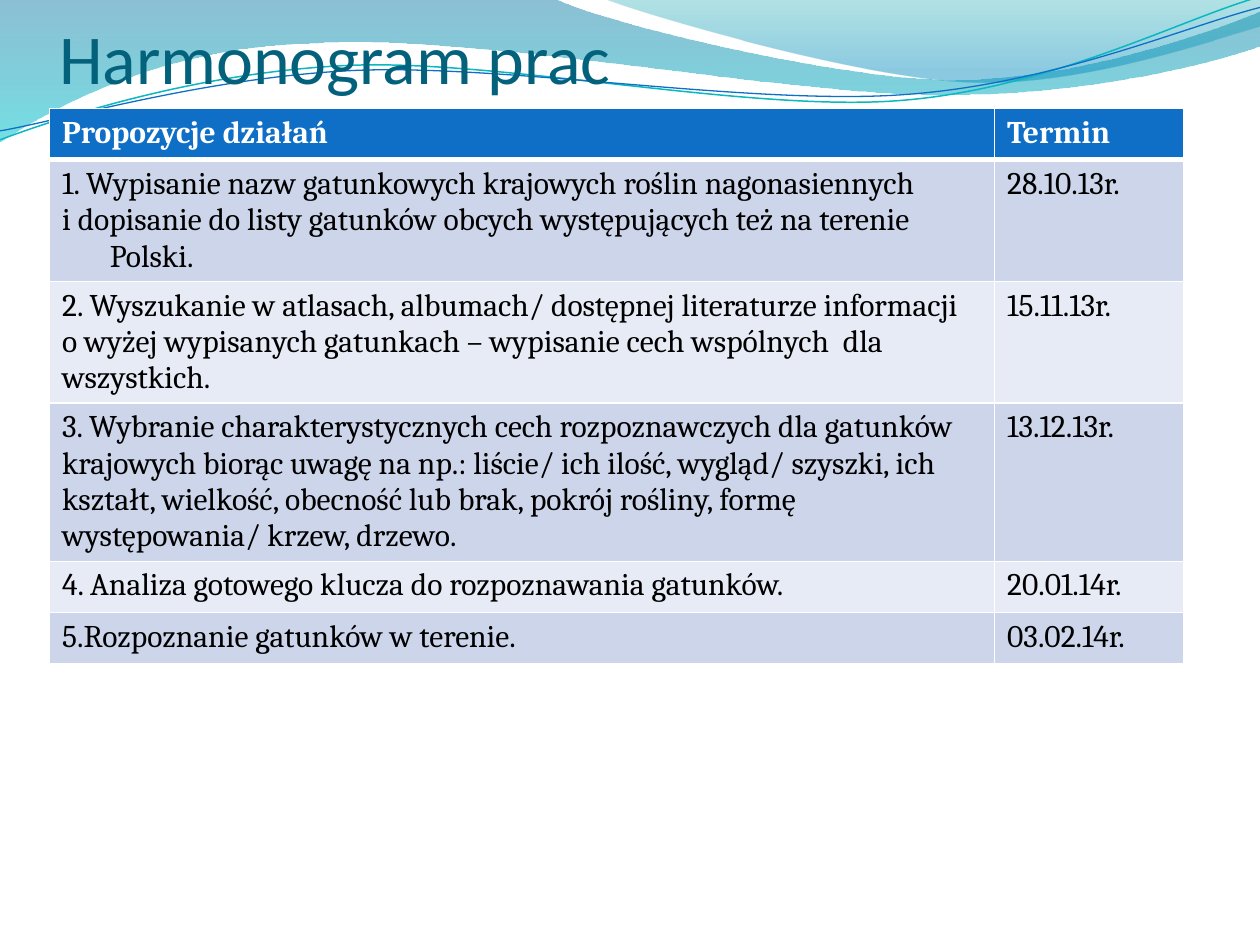
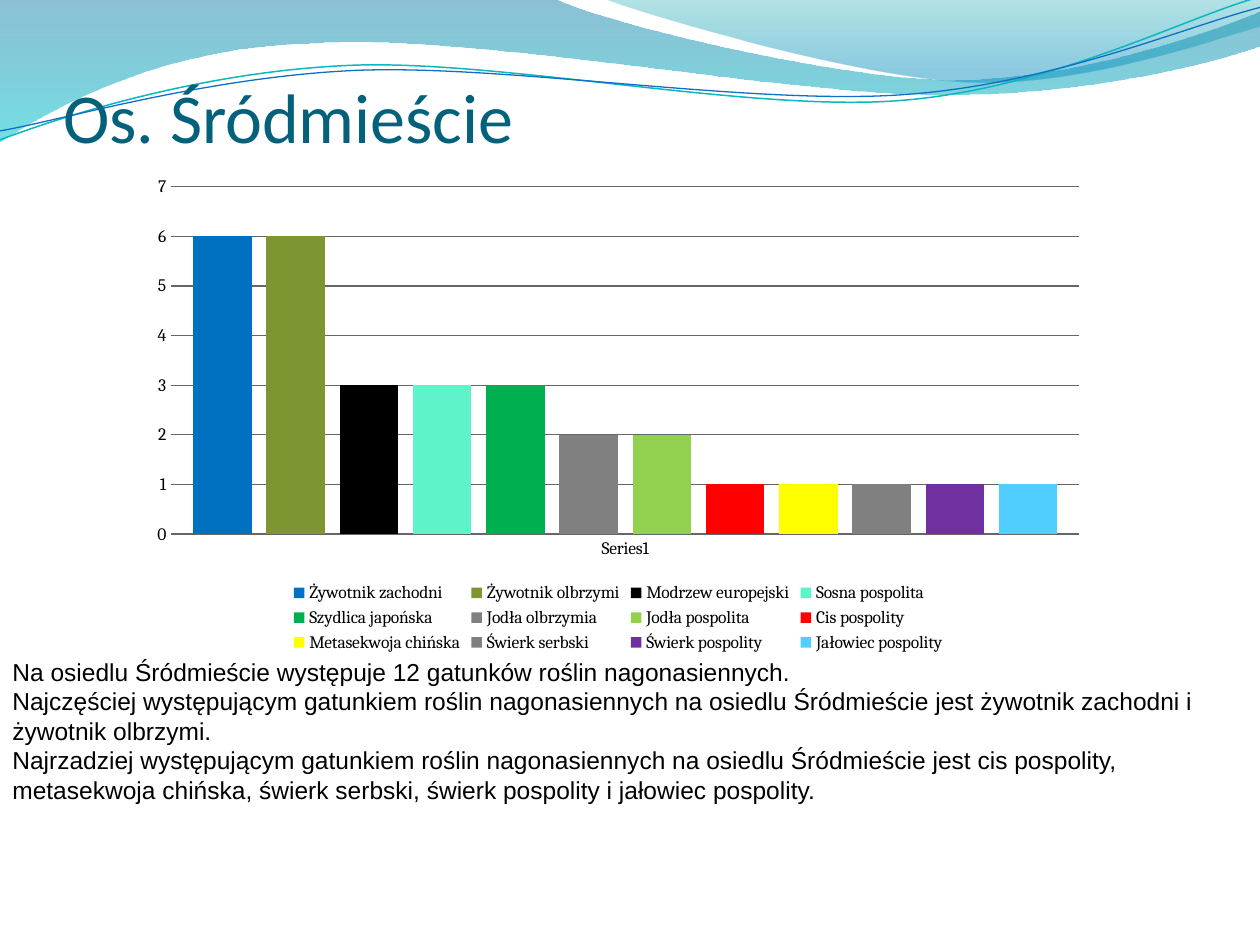
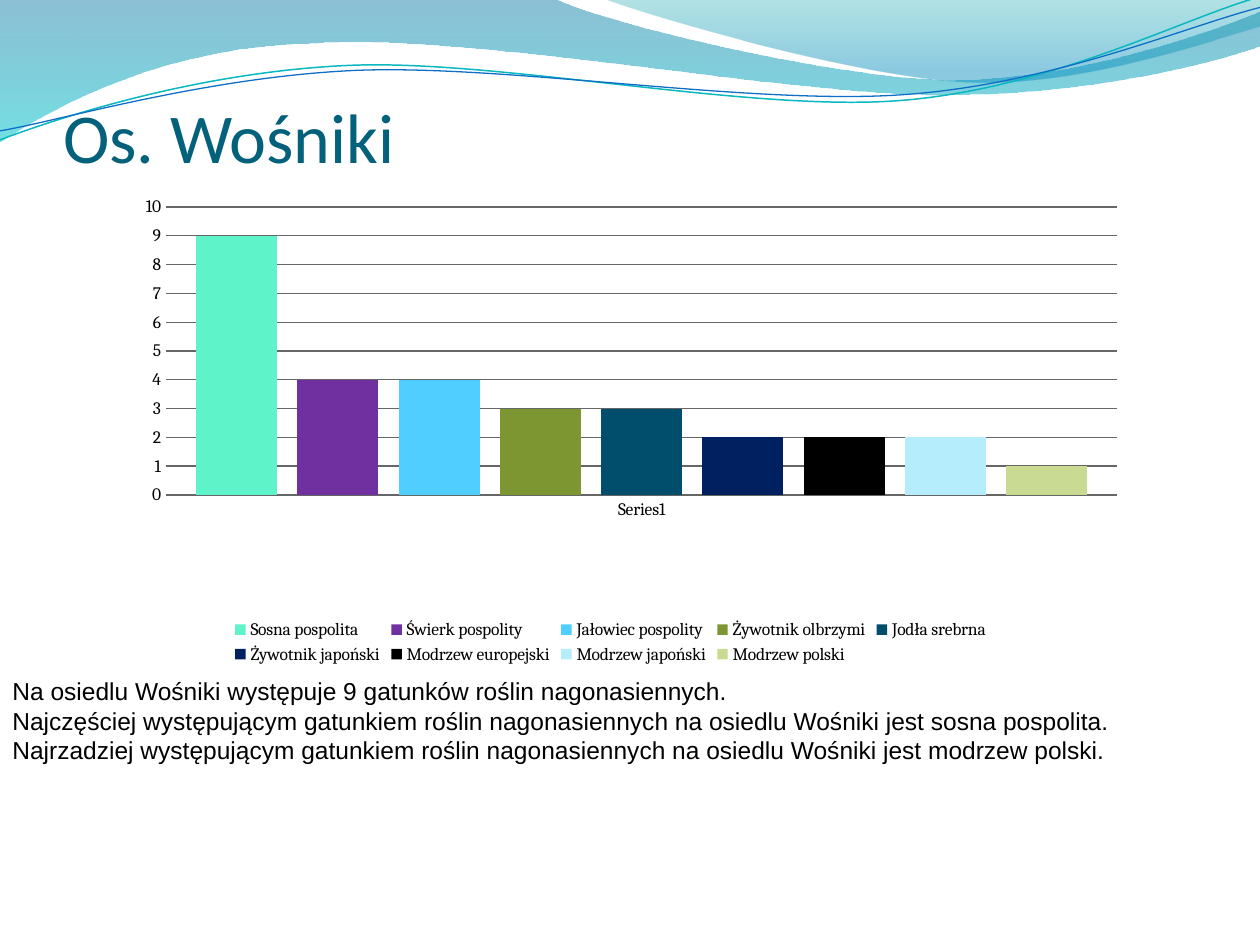
from math import cos, radians, sin

from lxml import etree
from pptx import Presentation
from pptx.chart.data import CategoryChartData
from pptx.dml.color import RGBColor
from pptx.enum.chart import XL_CHART_TYPE, XL_LEGEND_POSITION, XL_TICK_MARK
from pptx.enum.text import MSO_ANCHOR, MSO_AUTO_SIZE, PP_ALIGN
from pptx.oxml.ns import qn
from pptx.util import Cm, Pt

COLUMNS = XL_CHART_TYPE.COLUMN_CLUSTERED
LEGEND_BOTTOM = XL_LEGEND_POSITION.BOTTOM
NO_TICKS = XL_TICK_MARK.NONE
BOTTOM, MIDDLE = MSO_ANCHOR.BOTTOM, MSO_ANCHOR.MIDDLE
FIXED_SIZE, GROW = MSO_AUTO_SIZE.NONE, MSO_AUTO_SIZE.SHAPE_TO_FIT_TEXT
LEFT = PP_ALIGN.LEFT

COLORS = {
    "title": "04617B", "text": "000000", "white": "FFFFFF", "grid": "666666",
    "header": "0F6FC6", "odd_row": "CCD5EA", "even_row": "E7EBF5",
    "wave_blue": "0074A1", "wave_cyan": "00C6CF",
    "corner_teal": "00A1A9", "corner_blue": "008BBF",
    "line_teal": "0AB8BF", "line_blue": "0F6FC6",
}
SPECIES = {
    "Żywotnik zachodni": "0070C0", "Żywotnik olbrzymi": "7E9632",
    "Modrzew europejski": "000000", "Sosna pospolita": "5FF3CA",
    "Szydlica japońska": "00B050", "Jodła olbrzymia": "808080",
    "Jodła pospolita": "92D050", "Cis pospolity": "FF0000",
    "Metasekwoja chińska": "FFFF00", "Świerk serbski": "808080",
    "Świerk pospolity": "7030A0", "Jałowiec pospolity": "4FCEFF",
    "Jodła srebrna": "004E6C", "Żywotnik japoński": "002060",
    "Modrzew japoński": "B5EDFD", "Modrzew polski": "C9DA92",
}
BODY_FONT = "Cambria"
LINE_TILT = -2.7

WAVE_BOX = (-0.03, -0.03, 25.46, 2.9)
WAVE = [(0, 0), (11.18, -0.03),
        (12.09, 0.43, 16.87, 1.6, 19.25, 1.6),
        (21.67, 1.6, 24.33, 0.66, 25.4, 0.23), (25.43, 0.91),
        (24.97, 1.12, 22.1, 1.93, 18.95, 1.91),
        (15.8, 1.91, 9.7, 0.71, 6.53, 0.86),
        (3.28, 0.91, 1.17, 2.11, -0.03, 2.87), (0, 0)]
CORNER_BOX = (12.17, -0.03, 13.23, 1.78)
CORNER = [(12.17, -0.03),
          (12.93, 0.28, 17.32, 1.57, 19.53, 1.65),
          (21.74, 1.75, 24.41, 0.81, 25.4, 0.53), (25.4, 0), (12.17, -0.03)]
TEAL_BOX = (-0.05, 0.56, 25.45, 1.8)
TEAL_LINE = [(0, 2.82),
             (1.22, 2.36, 4.01, 1.45, 7.04, 1.32),
             (10.03, 1.19, 15.06, 2.26, 18.11, 2.03),
             (21.16, 1.8, 23.83, 0.38, 25.35, -0.05)]
BLUE_BOX = (-0.05, 0.76, 25.48, 1.47)
BLUE_LINE = [(0, 2.64),
             (1.19, 2.44, 4.17, 1.55, 7.19, 1.42),
             (10.24, 1.3, 15.16, 2.13, 18.21, 1.91),
             (21.23, 1.7, 23.9, 0.53, 25.4, 0.15)]

SCHEDULE = [
    ("Propozycje działań", "Termin"),
    ("1. Wypisanie nazw gatunkowych krajowych roślin nagonasiennych\n"
     "i dopisanie do listy gatunków obcych występujących też na terenie Polski.",
     "28.10.13r."),
    ("2. Wyszukanie w atlasach, albumach/ dostępnej literaturze informacji\n"
     "o wyżej wypisanych gatunkach – wypisanie cech wspólnych  dla wszystkich.",
     "15.11.13r."),
    ("3. Wybranie charakterystycznych cech rozpoznawczych dla gatunków krajowych "
     "biorąc uwagę na np.: liście/ ich ilość, wygląd/ szyszki, ich kształt, "
     "wielkość, obecność lub brak, pokrój rośliny, formę występowania/ krzew, drzewo.",
     "13.12.13r."),
    ("4. Analiza gotowego klucza do rozpoznawania gatunków.", "20.01.14r."),
    ("5.Rozpoznanie gatunków w terenie.", "03.02.14r."),
]
HANGING_ROW = 1

ESTATES = [
    {
        "title": "Os. Śródmieście", "title_box": (1.27, 1.57, 22.86, 1.6),
        "chart_box": (2.77, 3.37, 19.38, 9.88), "plot": (0.035, 0.04, 0.945, 0.709),
        "top": 7,
        "counts": {
            "Żywotnik zachodni": 6, "Żywotnik olbrzymi": 6, "Modrzew europejski": 3,
            "Sosna pospolita": 3, "Szydlica japońska": 3, "Jodła olbrzymia": 2,
            "Jodła pospolita": 2, "Cis pospolity": 1, "Metasekwoja chińska": 1,
            "Świerk serbski": 1, "Świerk pospolity": 1, "Jałowiec pospolity": 1,
        },
        "notes_box": (0, 13.1, 25.4, 3.25), "wrap": True,
        "notes": "Na osiedlu Śródmieście występuje 12 gatunków roślin nagonasiennych.\n"
                 "Najczęściej występującym gatunkiem roślin nagonasiennych na osiedlu "
                 "Śródmieście jest żywotnik zachodni i żywotnik olbrzymi.\n"
                 "Najrzadziej występującym gatunkiem roślin nagonasiennych na osiedlu "
                 "Śródmieście jest cis pospolity, metasekwoja chińska, świerk serbski, "
                 "świerk pospolity i jałowiec pospolity.",
    },
    {
        "title": "Os. Wośniki", "title_box": (1.27, 1.95, 22.86, 1.63),
        "chart_box": (1.98, 3.57, 20.65, 9.92), "plot": (0.066, 0.061, 0.929, 0.585),
        "top": 10,
        "counts": {
            "Sosna pospolita": 9, "Świerk pospolity": 4, "Jałowiec pospolity": 4,
            "Żywotnik olbrzymi": 3, "Jodła srebrna": 3, "Żywotnik japoński": 2,
            "Modrzew europejski": 2, "Modrzew japoński": 2, "Modrzew polski": 1,
        },
        "notes_box": (0, 13.49, 22.73, 2.06), "wrap": False,
        "notes": "Na osiedlu Wośniki występuje 9 gatunków roślin nagonasiennych.\n"
                 "Najczęściej występującym gatunkiem roślin nagonasiennych na osiedlu "
                 "Wośniki jest sosna pospolita.\n"
                 "Najrzadziej występującym gatunkiem roślin nagonasiennych na osiedlu "
                 "Wośniki jest modrzew polski.",
    },
]


def rgb(name):
    return RGBColor.from_string(COLORS[name])


def lengths(box):
    return [Cm(value) for value in box]


def write_text(frame, text, font=BODY_FONT, size=18, color="text", bold=False, hanging=0):
    for number, line in enumerate(text.split("\n")):
        para = frame.add_paragraph() if number else frame.paragraphs[0]
        para.alignment = LEFT
        if hanging:
            properties = para._p.get_or_add_pPr()
            properties.set("marL", str(Cm(hanging)))
            properties.set("indent", str(-Cm(hanging)))
        span = para.add_run()
        span.text = line
        span.font.name, span.font.size, span.font.bold = font, Pt(size), bold
        span.font.color.rgb = rgb(color)


def local_point(x, y, box, tilt):
    left, top, width, height = box
    angle = radians(-tilt)
    dx, dy = x - left - width / 2, y - top - height / 2
    return (Cm(width / 2 + dx * cos(angle) - dy * sin(angle)),
            Cm(height / 2 + dx * sin(angle) + dy * cos(angle)))


def add_outline(page, segments, box, tilt=0):
    ends = [lengths(segment[-2:]) for segment in segments]
    builder = page.shapes.build_freeform(*ends[0])
    builder.add_line_segments(ends[1:], close=segments[0] == segments[-1])
    shape = builder.convert_to_shape()
    shape.shadow.inherit = False
    shape.left, shape.top, shape.width, shape.height = lengths(box)
    shape.rotation = tilt
    outline = next(shape.element.iter(qn("a:path")))
    outline.set("w", str(shape.width))
    outline.set("h", str(shape.height))
    for step, segment in zip(list(outline), segments):
        if len(segment) == 6:
            curve = etree.Element(qn("a:cubicBezTo"))
            outline.replace(step, curve)
            step = curve
        for point in list(step):
            step.remove(point)
        for x, y in zip(segment[::2], segment[1::2]):
            local_x, local_y = local_point(x, y, box, tilt)
            etree.SubElement(step, qn("a:pt"), x=str(local_x), y=str(local_y))
    return shape


def add_wave(page, segments, box, stops):
    shape = add_outline(page, segments, box)
    shape.line.fill.background()
    shape.fill.gradient()
    shape.fill.gradient_angle = 270
    for stop, (position, color, _) in zip(shape.fill.gradient_stops, stops):
        stop.position = position
        stop.color.rgb = rgb(color)
    paints = shape.element.spPr.find(qn("a:gradFill")).iter(qn("a:srgbClr"))
    for paint, (_, _, opacity) in zip(paints, stops):
        etree.SubElement(paint, qn("a:alpha")).set("val", str(opacity * 1000))
    return shape


def add_wave_line(page, segments, box, color, width):
    shape = add_outline(page, segments, box, LINE_TILT)
    shape.fill.background()
    shape.line.color.rgb = rgb(color)
    shape.line.width = Pt(width)
    return shape


def decorate_master(deck, page):
    parts = [
        add_wave(page, WAVE, WAVE_BOX, [(0, "wave_blue", 45), (1, "wave_cyan", 55)]),
        add_wave(page, CORNER, CORNER_BOX,
                 [(0, "corner_teal", 30), (0.8, "corner_blue", 45)]),
        add_wave_line(page, TEAL_LINE, TEAL_BOX, "line_teal", 0.85),
        add_wave_line(page, BLUE_LINE, BLUE_BOX, "line_blue", 0.75),
    ]
    for part in parts:
        deck.slide_master.shapes.element.append(part.element)


def add_page(deck, title, box):
    page = deck.slides.add_slide(deck.slide_layouts[5])
    holder = page.shapes.title
    holder.left, holder.top, holder.width, holder.height = lengths(box)
    frame = holder.text_frame
    frame.margin_left = frame.margin_right = frame.margin_bottom = 0
    frame.margin_top = Cm(0.13)
    frame.vertical_anchor = BOTTOM
    frame.auto_size = FIXED_SIZE
    write_text(frame, title, font="Calibri", size=40, color="title")
    return page


def set_borders(cell, bottom):
    properties = cell._tc.get_or_add_tcPr()
    for side, width in (("L", 1), ("R", 1), ("T", 1), ("B", bottom)):
        line = etree.SubElement(properties, qn(f"a:ln{side}"), w=str(Pt(width)))
        fill = etree.SubElement(line, qn("a:solidFill"))
        etree.SubElement(fill, qn("a:srgbClr"), val=COLORS["white"])


def add_schedule(page, box):
    left, top, width, row_height = lengths(box)
    table = page.shapes.add_table(
        len(SCHEDULE), 2, left, top, width, row_height * len(SCHEDULE)).table
    table.columns[0].width = Cm(19.05)
    table.columns[1].width = width - Cm(19.05)
    for row, texts in enumerate(SCHEDULE):
        is_header = row == 0
        fill = "header" if is_header else "odd_row" if row % 2 else "even_row"
        for column, text in enumerate(texts):
            cell = table.cell(row, column)
            set_borders(cell, bottom=3 if is_header else 1)
            cell.fill.solid()
            cell.fill.fore_color.rgb = rgb(fill)
            write_text(cell.text_frame, text, bold=is_header,
                       color="white" if is_header else "text",
                       hanging=0.96 if (row, column) == (HANGING_ROW, 0) else 0)


def set_plot_layout(chart, plot):
    area = chart._chartSpace.chart.plotArea
    for old in area.findall(qn("c:layout")):
        area.remove(old)
    layout = etree.Element(qn("c:layout"))
    area.insert(0, layout)
    manual = etree.SubElement(layout, qn("c:manualLayout"))
    values = [("layoutTarget", "inner"), ("xMode", "edge"), ("yMode", "edge")]
    values += zip("xywh", plot)
    for tag, value in values:
        etree.SubElement(manual, qn(f"c:{tag}"), val=str(value))


def add_species_chart(page, box, counts, top, plot):
    data = CategoryChartData()
    data.categories = ["Series1"]
    for name, count in counts.items():
        data.add_series(name, [count])
    chart = page.shapes.add_chart(COLUMNS, *lengths(box), data).chart
    chart.has_title = False
    chart.font.name, chart.font.size = BODY_FONT, Pt(10)
    chart.font.color.rgb = rgb("text")
    chart.has_legend = True
    chart.legend.position = LEGEND_BOTTOM
    chart.legend.include_in_layout = False

    columns = chart.plots[0]
    columns.gap_width, columns.overlap = 75, -25
    columns.vary_by_categories = False
    for series in columns.series:
        series.format.fill.solid()
        series.format.fill.fore_color.rgb = RGBColor.from_string(SPECIES[series.name])

    values, categories = chart.value_axis, chart.category_axis
    values.minimum_scale, values.maximum_scale, values.major_unit = 0, top, 1
    values.major_tick_mark = categories.major_tick_mark = NO_TICKS
    values.format.line.fill.background()
    values.has_major_gridlines = True
    for line in (values.major_gridlines.format.line, categories.format.line):
        line.color.rgb = rgb("grid")
        line.width = Pt(0.75)
    set_plot_layout(chart, plot)


def add_notes(page, box, text, wrap):
    frame = page.shapes.add_textbox(*lengths(box)).text_frame
    frame.word_wrap = wrap
    frame.auto_size = GROW
    frame.vertical_anchor = MIDDLE
    write_text(frame, text, font="Arial", size=14)


def add_estate(deck, estate):
    page = add_page(deck, estate["title"], estate["title_box"])
    add_species_chart(page, estate["chart_box"], estate["counts"],
                      estate["top"], estate["plot"])
    add_notes(page, estate["notes_box"], estate["notes"], estate["wrap"])


def main():
    deck = Presentation()
    deck.slide_width, deck.slide_height = Cm(25.4), Cm(19.05)
    page = add_page(deck, "Harmonogram prac", (1.19, 0.58, 22.86, 1.4))
    decorate_master(deck, page)
    add_schedule(page, (1, 2.19, 22.86, 1.03))
    for estate in ESTATES:
        add_estate(deck, estate)
    deck.save("out.pptx")


if __name__ == "__main__":
    main()
